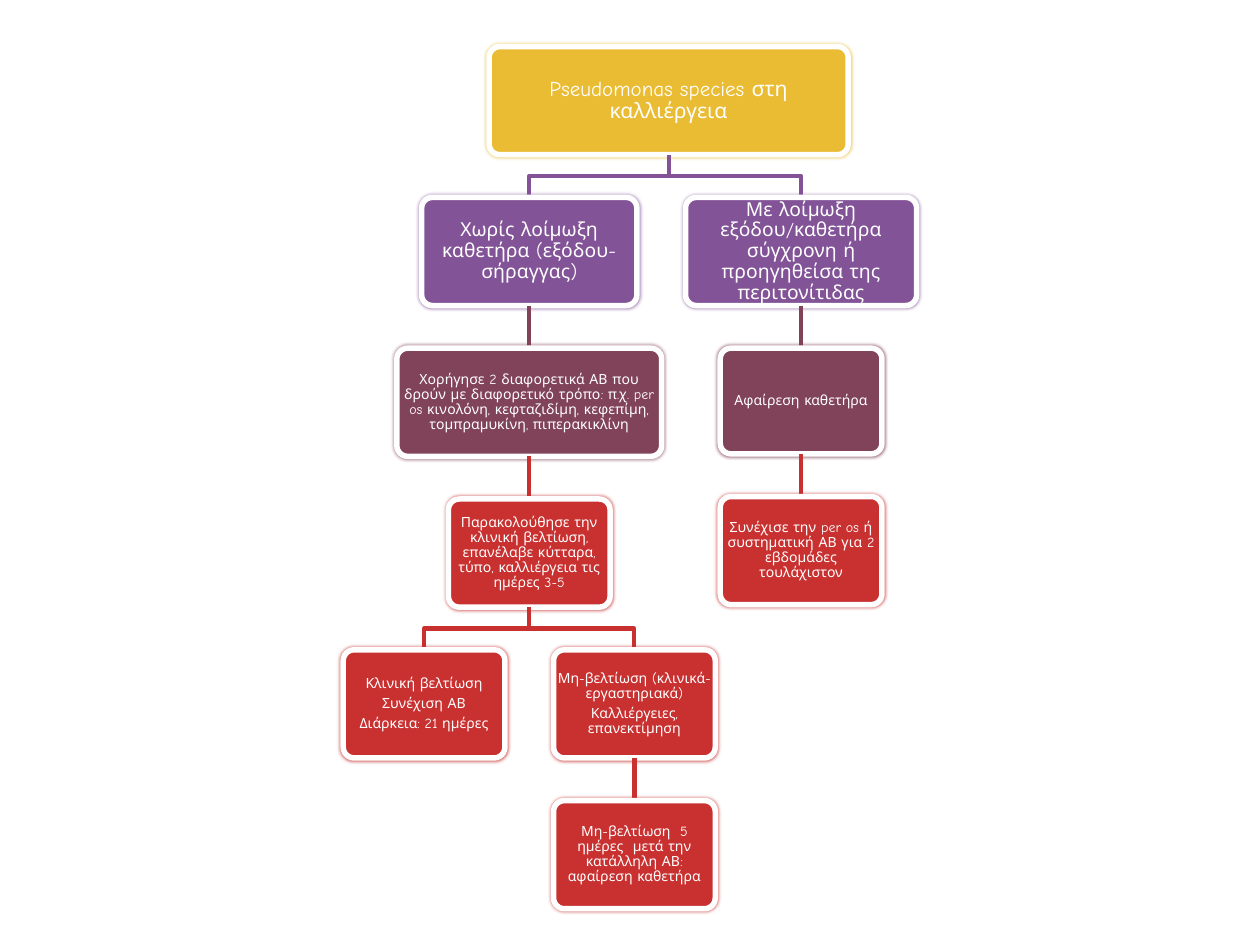
"""Build a one-slide decision tree for Pseudomonas species in culture."""
from dataclasses import dataclass

from lxml import etree
from pptx import Presentation
from pptx.dml.color import RGBColor
from pptx.enum.shapes import MSO_CONNECTOR, MSO_SHAPE
from pptx.enum.text import MSO_ANCHOR, PP_ALIGN
from pptx.oxml.ns import qn
from pptx.shapes.autoshape import Shape
from pptx.shapes.shapetree import SlideShapes
from pptx.util import Cm, Pt

ROUNDED = MSO_SHAPE.ROUNDED_RECTANGLE
STRAIGHT = MSO_CONNECTOR.STRAIGHT
MIDDLE = MSO_ANCHOR.MIDDLE
CENTER = PP_ALIGN.CENTER
TOP_SITE, BOTTOM_SITE = 0, 2

COLORS = {
    "gold": "EABC33",
    "purple": "825397",
    "plum": "814359",
    "red": "C93131",
    "white": "FFFFFF",
}
FONT = "Comic Neue"
FIRST_TOP, ROW_STEP, BOX_HEIGHT = 0.94, 3.04, 2.18


@dataclass(frozen=True)
class Step:
    """One box of the tree, with lengths in centimetres."""

    name: str
    parent: str
    row: int
    center: float
    width: float
    color: str
    lines: tuple[str, ...]
    size: int = 8
    inset: float = 0.01
    height: float = BOX_HEIGHT
    lift: float = 0.0

    @property
    def top(self) -> float:
        """Return the upper edge given by the row."""
        return FIRST_TOP + self.row * ROW_STEP - self.lift

    @property
    def bottom(self) -> float:
        """Return the lower edge."""
        return self.top + self.height


STEPS = (
    Step("culture", "", 0, 13.48, 7.24, "gold",
         ("Pseudomonas species στη καλλιέργεια",), 12, 0.06),
    Step("no_infection", "culture", 1, 10.67, 4.34, "purple",
         ("Χωρίς λοίμωξη καθετήρα (εξόδου-σήραγγας)",), 11, 0.06),
    Step("two_drugs", "no_infection", 2, 10.67, 5.34, "plum",
         ("Χορήγησε 2 διαφορετικά ΑΒ που δρούν με διαφορετικό τρόπο: π.χ. "
          "per os κινολόνη, κεφταζιδίμη, κεφεπίμη, τομπραμυκίνη, "
          "πιπερακικλίνη",)),
    Step("follow_up", "two_drugs", 3, 10.67, 3.26, "red",
         ("Παρακολούθησε την κλινική βελτίωση, επανέλαβε κύτταρα, τύπο, "
          "καλλιέργεια τις ημέρες 3-5",)),
    Step("improved", "follow_up", 4, 8.55, 3.26, "red",
         ("Κλινική βελτίωση", "Συνέχιση ΑΒ", "Διάρκεια: 21 ημέρες")),
    Step("not_improved", "follow_up", 4, 12.79, 3.26, "red",
         ("Μη-βελτίωση (κλινικά-εργαστηριακά)",
          "Καλλιέργειες, επανεκτίμηση")),
    Step("late_removal", "not_improved", 5, 12.79, 3.26, "red",
         ("Μη-βελτίωση  5 ημέρες  μετά την κατάλληλη ΑΒ: "
          "αφαίρεση καθετήρα",)),
    Step("infection", "culture", 1, 16.15, 4.66, "purple",
         ("Με λοίμωξη εξόδου/καθετήρα σύγχρονη ή προηγηθείσα της "
          "περιτονίτιδας",), 11, 0.06),
    Step("removal", "infection", 2, 16.15, 3.26, "plum",
         ("Αφαίρεση καθετήρα",), height=2.13),
    Step("continue", "removal", 3, 16.15, 3.26, "red",
         ("Συνέχισε την per os ή συστηματική ΑΒ για 2 εβδομάδες "
          "τουλάχιστον",), lift=0.05),
)


def rgb(name: str) -> RGBColor:
    """Return a named colour."""
    return RGBColor.from_string(COLORS[name])


def add_rim(box: Shape, color: str) -> None:
    """Give the box a thin soft rim in its own colour."""
    box.shadow.inherit = False
    effects = box._element.spPr.find(qn("a:effectLst"))
    shadow = etree.SubElement(effects, qn("a:outerShdw"), blurRad="25400",
                              dist="0", dir="5400000", rotWithShape="0")
    tint = etree.SubElement(shadow, qn("a:srgbClr"), val=COLORS[color])
    etree.SubElement(tint, qn("a:alpha"), val="80000")


def add_box(shapes: SlideShapes, step: Step) -> Shape:
    """Draw a step with its text."""
    width = Cm(step.width)
    box = shapes.add_shape(ROUNDED, Cm(step.center) - width // 2,
                           Cm(step.top), width, Cm(step.height))
    box.adjustments[0] = 0.1
    box.fill.solid()
    box.fill.fore_color.rgb = rgb(step.color)
    box.line.color.rgb = rgb("white")
    box.line.width = Pt(3.15)
    add_rim(box, step.color)
    frame = box.text_frame
    frame.word_wrap = True
    frame.vertical_anchor = MIDDLE
    frame.margin_left = frame.margin_right = Cm(step.inset)
    frame.margin_top = frame.margin_bottom = Cm(step.inset)
    for index, line in enumerate(step.lines):
        para = frame.add_paragraph() if index else frame.paragraphs[0]
        para.alignment = CENTER
        para.line_spacing = 0.9
        para.space_after = Pt(0.35 * step.size)
        span = para.add_run()
        span.text = line
        span.font.name = FONT
        span.font.size = Pt(step.size)
        span.font.color.rgb = rgb("white")
    return box


def add_elbow(shapes: SlideShapes, parent: Step, child: Step) -> Shape:
    """Draw a bent link that turns halfway between two rows."""
    turn = (parent.bottom + child.top) / 2
    builder = shapes.build_freeform(Cm(parent.center), Cm(parent.bottom))
    corners = ((parent.center, turn), (child.center, turn),
               (child.center, child.top))
    builder.add_line_segments([(Cm(x), Cm(y)) for x, y in corners],
                              close=False)
    elbow = builder.convert_to_shape()
    elbow.fill.background()
    elbow.shadow.inherit = False
    return elbow


def add_step(shapes: SlideShapes, step: Step, steps: dict[str, Step],
             boxes: dict[str, Shape]) -> Shape:
    """Draw a step above the link that leads to it."""
    parent = steps.get(step.parent)
    if parent is None:
        return add_box(shapes, step)
    straight = parent.center == step.center
    if straight:
        link = shapes.add_connector(STRAIGHT, Cm(parent.center),
                                    Cm(parent.bottom), Cm(step.center),
                                    Cm(step.top))
        etree.SubElement(link._element.spPr, qn("a:effectLst"))
    else:
        link = add_elbow(shapes, parent, step)
    link.line.color.rgb = rgb(step.color)
    link.line.width = Pt(2.36)
    box = add_box(shapes, step)
    if straight:
        link.begin_connect(boxes[step.parent], BOTTOM_SITE)
        link.end_connect(box, TOP_SITE)
    return box


def main() -> None:
    """Build and save the deck."""
    deck = Presentation()
    deck.slide_width, deck.slide_height = Cm(25.4), Cm(19.05)
    page = deck.slides.add_slide(deck.slide_layouts[6])
    steps = {step.name: step for step in STEPS}
    boxes: dict[str, Shape] = {}
    for step in STEPS:
        boxes[step.name] = add_step(page.shapes, step, steps, boxes)
    deck.save("out.pptx")


if __name__ == "__main__":
    main()
